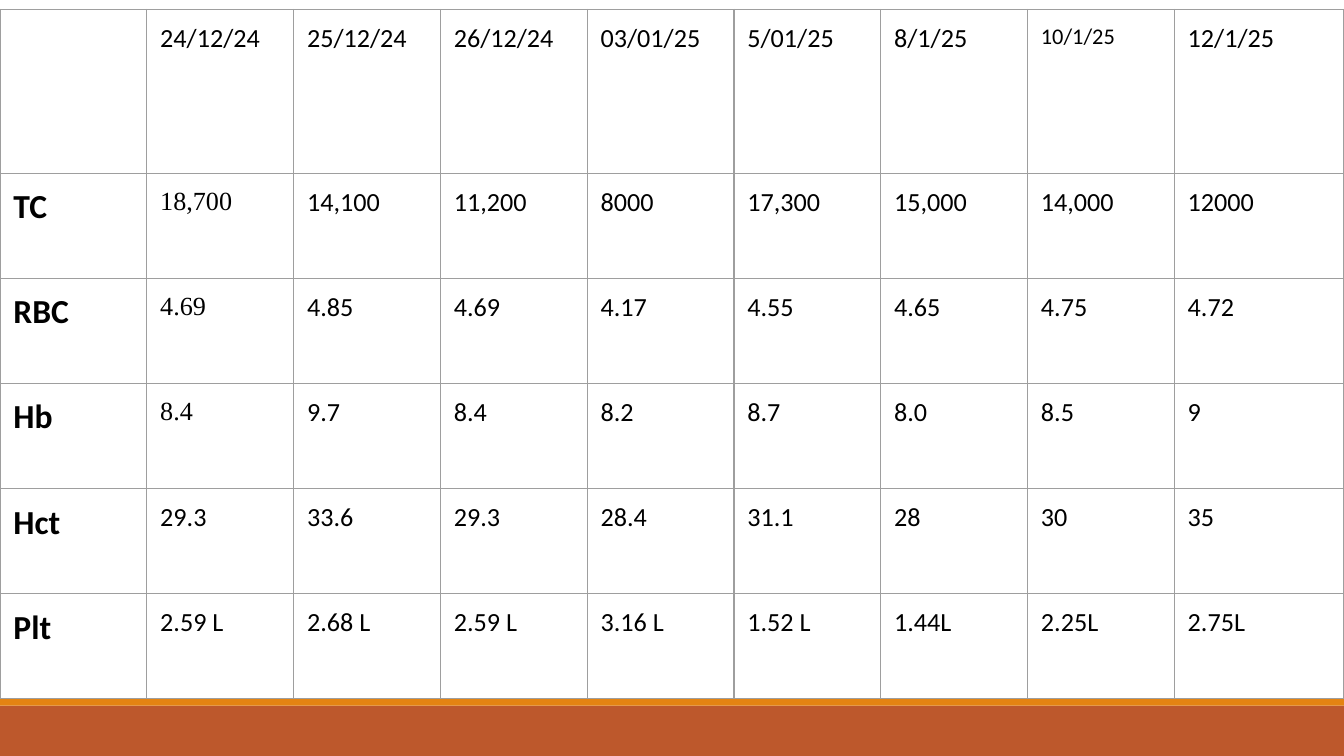
from lxml import etree
from pptx import Presentation
from pptx.dml.color import RGBColor
from pptx.enum.shapes import MSO_SHAPE
from pptx.oxml.ns import qn
from pptx.util import Inches, Pt

RECTANGLE = MSO_SHAPE.RECTANGLE

DATES = ["", "24/12/24", "25/12/24", "26/12/24", "03/01/25", "5/01/25", "8/1/25", "10/1/25", "12/1/25"]
RESULTS = [
    ["TC", "18,700", "14,100", "11,200", "8000", "17,300", "15,000", "14,000", "12000"],
    ["RBC", "4.69", "4.85", "4.69", "4.17", "4.55", "4.65", "4.75", "4.72"],
    ["Hb", "8.4", "9.7", "8.4", "8.2", "8.7", "8.0", "8.5", "9"],
    ["Hct", "29.3", "33.6", "29.3", "28.4", "31.1", "28", "30", "35"],
    ["Plt", "2.59 L", "2.68 L", "2.59 L", "3.16 L", "1.52 L", "1.44L", "2.25L", "2.75L"],
]
SERIF_TESTS = ("TC", "RBC", "Hb")
SMALL_DATE = "10/1/25"

THEME = {
    "font": "Calibri",
    "serif": "Times New Roman",
    "text": "000000",
    "border": "9E9E9E",
    "footer": "BD582C",
    "accent": "E48312",
    "label_size": 18,
    "value_size": 14,
    "small_size": 12,
    "border_width": 0.75,
}

SLIDE_WIDTH = 10
SLIDE_HEIGHT = SLIDE_WIDTH * 9 / 16
TABLE_TOP, TABLE_HEIGHT = 0.07, 5.13
HEADER_HEIGHT, LAST_WIDTH = 1.22, 1.26
CELL_MARGIN = 0.1
FOOTER_TOP, ACCENT_TOP = 5.25, 5.2
BANDS = [
    (FOOTER_TOP, SLIDE_HEIGHT - FOOTER_TOP, THEME["footer"]),
    (ACCENT_TOP, FOOTER_TOP - ACCENT_TOP, THEME["accent"]),
]


def add_band(slide, top, height, color):
    shape = slide.shapes.add_shape(RECTANGLE, 0, Inches(top), Inches(SLIDE_WIDTH), Inches(height))
    shape.shadow.inherit = False
    shape.fill.solid()
    shape.fill.fore_color.rgb = RGBColor.from_string(color)
    shape.line.fill.background()


def add_borders(cell):
    properties = cell._tc.get_or_add_tcPr()
    for position, side in enumerate(("a:lnL", "a:lnR", "a:lnT", "a:lnB")):
        line = etree.Element(qn(side), w=str(Pt(THEME["border_width"])))
        fill = etree.SubElement(line, qn("a:solidFill"))
        etree.SubElement(fill, qn("a:srgbClr"), val=THEME["border"])
        properties.insert(position, line)


def write_text(cell, text, *, size, font=THEME["font"], bold=False):
    paragraph = cell.text_frame.paragraphs[0]
    run = paragraph.add_run()
    run.text = text
    run.font.size = Pt(size)
    run.font.name = font
    run.font.bold = bold
    run.font.color.rgb = RGBColor.from_string(THEME["text"])


def text_format(row, column, values):
    if column == 0:
        return {"size": THEME["label_size"], "bold": True}
    if row == 0 and values[column] == SMALL_DATE:
        return {"size": THEME["small_size"]}
    if column == 1 and values[0] in SERIF_TESTS:
        return {"size": THEME["value_size"], "font": THEME["serif"]}
    return {"size": THEME["value_size"]}


def add_results_table(slide):
    rows = [DATES, *RESULTS]
    table = slide.shapes.add_table(
        len(rows), len(DATES), 0, Inches(TABLE_TOP), Inches(SLIDE_WIDTH), Inches(TABLE_HEIGHT)
    ).table
    table.first_row = False
    table.horz_banding = False

    column_width = (SLIDE_WIDTH - LAST_WIDTH) / (len(DATES) - 1)
    for index, column in enumerate(table.columns):
        column.width = Inches(LAST_WIDTH if index == len(DATES) - 1 else column_width)
    row_height = (TABLE_HEIGHT - HEADER_HEIGHT) / len(RESULTS)
    for index, row in enumerate(table.rows):
        row.height = Inches(row_height if index else HEADER_HEIGHT)

    for row, values in enumerate(rows):
        for column, text in enumerate(values):
            cell = table.cell(row, column)
            cell.margin_left = cell.margin_right = Inches(CELL_MARGIN)
            cell.margin_top = cell.margin_bottom = Inches(CELL_MARGIN)
            cell.fill.background()
            add_borders(cell)
            if text:
                write_text(cell, text, **text_format(row, column, values))


def main():
    presentation = Presentation()
    presentation.slide_width = Inches(SLIDE_WIDTH)
    presentation.slide_height = Inches(SLIDE_HEIGHT)
    slide = presentation.slides.add_slide(presentation.slide_layouts[6])
    for top, height, color in BANDS:
        add_band(slide, top, height, color)
    add_results_table(slide)
    presentation.save("out.pptx")


if __name__ == "__main__":
    main()
